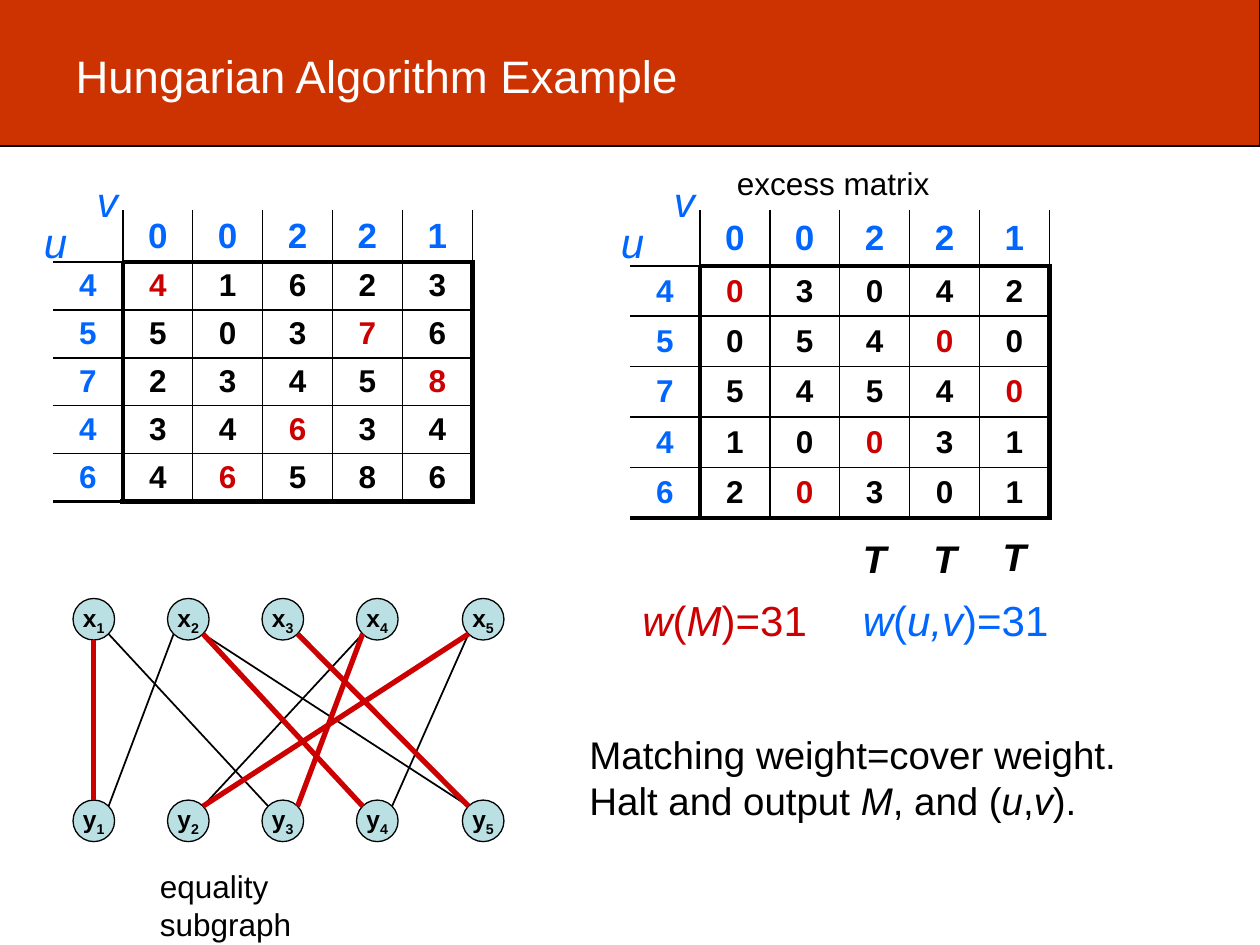
from lxml.etree import SubElement as Sub
from pptx import Presentation
from pptx.dml.color import RGBColor
from pptx.enum.shapes import MSO_CONNECTOR as Conn, MSO_SHAPE as Geo
from pptx.enum.text import MSO_ANCHOR as Anchor, PP_ALIGN as Align
from pptx.oxml.ns import qn
from pptx.util import Inches, Pt

BLACK = RGBColor(0x00, 0x00, 0x00)
WHITE = RGBColor(0xFF, 0xFF, 0xFF)
BAND = RGBColor(0xCC, 0x33, 0x00)
RED = RGBColor(0xCC, 0x00, 0x00)
BLUE = RGBColor(0x00, 0x66, 0xFF)
NODE = RGBColor(0xBB, 0xE0, 0xE3)

# Weights, cover labels and matching; the excess follows from them
U = [4, 5, 7, 4, 6]
V = [0, 0, 2, 2, 1]
COST = [[4, 1, 6, 2, 3], [5, 0, 3, 7, 6], [2, 3, 4, 5, 8],
        [3, 4, 6, 3, 4], [4, 6, 5, 8, 6]]
EXCESS = [[u + v - w for v, w in zip(V, row)] for u, row in zip(U, COST)]
MATCH = [0, 3, 4, 2, 1]
N = len(U)


def style(font, size, color, bold=None, italic=None):
    font.name, font.size, font.bold, font.italic = "Arial", Pt(size), bold, italic
    font.color.rgb = color


def label(slide, box, lines, size, color, bold=None):
    """Text box; parts between asterisks are italic."""
    frame = slide.shapes.add_textbox(*map(Inches, box)).text_frame
    frame.word_wrap = False
    for i, line in enumerate(lines.split("\n")):
        para = frame.add_paragraph() if i else frame.paragraphs[0]
        style(para.font, size, color, bold)
        for j, part in enumerate(line.split("*")):
            if part:
                run = para.add_run()
                run.text = part
                run.font.italic = j % 2 == 1


def header(slide, box):
    """Coloured band behind the title."""
    x, y, w, h = box
    band = slide.shapes.add_shape(Geo.RECTANGLE, *map(Inches, box))
    band.shadow.inherit = False
    band.fill.solid()
    band.fill.fore_color.rgb = BAND
    band.line.color.rgb = BLACK
    band.line.width = Pt(0.75)
    slide.shapes._spTree.insert(2, band._element)

    title = slide.shapes.title
    title.left, title.top = Inches(x + 0.51), Inches(y + 0.34)
    title.width, title.height = Inches(7.58), Inches(1)
    title.text = "Hungarian Algorithm Example"
    title.text_frame.vertical_anchor = Anchor.TOP
    para = title.text_frame.paragraphs[0]
    para.alignment = Align.LEFT
    style(para.font, 26, WHITE)


def rule_row(edge, col):
    """Width of the rule above row number edge."""
    if edge == 0:
        return 0
    if col == 0:
        return 2.25 if edge == N + 1 else 1
    return 3 if edge in (1, N + 1) else 1


def rule_col(edge, row):
    """Width of the rule left of column number edge."""
    if edge == 0:
        return 0
    return 3 if row and edge in (1, N + 1) else 1


def border(cell, side, width):
    line = Sub(cell._tc.get_or_add_tcPr(), qn("a:ln" + side), w=str(Pt(width)))
    if width:
        fill = Sub(line, qn("a:solidFill"))
        Sub(fill, qn("a:srgbClr"), val=str(BLACK))
    else:
        Sub(line, qn("a:noFill"))


def matrix(slide, box, values, head):
    """Matrix with blue labels, u down the side and v along the top."""
    x, y, w, h = box
    shape = slide.shapes.add_table(N + 1, N + 1, *map(Inches, box))
    table = shape.table
    table.first_row = table.horz_banding = False
    table._tbl.tblPr.find(qn("a:tableStyleId")).text = (
        "{2D5ABB26-0587-4C30-8999-92F81FD0307C}")
    grid = [[""] + V] + [[u] + row for u, row in zip(U, values)]
    for r, row in enumerate(grid):
        table.rows[r].height = Inches((h - head) / N if r else head)
        for c, value in enumerate(row):
            cell = table.cell(r, c)
            cell.margin_top = cell.margin_bottom = 0
            cell.vertical_anchor = Anchor.MIDDLE
            cell.text = str(value)
            para = cell.text_frame.paragraphs[0]
            para.alignment = Align.CENTER
            inner = r and c
            color = BLACK if inner else BLUE
            if inner and MATCH[r - 1] == c - 1:
                color = RED
            style(para.font, 18 if r else 20, color, True)
            border(cell, "L", rule_col(c, r))
            border(cell, "R", rule_col(c + 1, r))
            border(cell, "T", rule_row(r, c))
            border(cell, "B", rule_row(r + 1, c))
            cell.fill.background()
    label(slide, (x - 0.17, y, 0.39, 0.5), "*u*", 24, BLUE)
    label(slide, (x + 0.25, y - 0.33, 0.37, 0.5), "*v*", 24, BLUE)


def node(slide, x, y, size, name, index):
    dot = slide.shapes.add_shape(Geo.OVAL, *map(Inches, (x, y, size, size)))
    dot.shadow.inherit = False
    dot.fill.solid()
    dot.fill.fore_color.rgb = NODE
    dot.line.color.rgb = BLACK
    dot.line.width = Pt(0.75)
    frame = dot.text_frame
    frame.margin_left = frame.margin_right = 0
    frame.margin_top = frame.margin_bottom = 0
    frame.word_wrap = False
    frame.vertical_anchor = Anchor.MIDDLE
    para = frame.paragraphs[0]
    para.alignment = Align.CENTER
    style(para.font, 14, BLACK, True)
    para.add_run().text = name
    low = para.add_run()
    low.text = str(index)
    low._r.get_or_add_rPr().set("baseline", "-25000")


def graph(slide, box):
    """Two rows of nodes, joined where the excess is zero."""
    x, y, w, h = box
    size = 0.33
    mids = [x + size / 2 + step for step in (0, 0.75, 1.5, 2.25, w - size)]
    for name, top in (("x", y), ("y", y + h - size)):
        for i, mid in enumerate(mids, 1):
            node(slide, mid - size / 2, top, size, name, i)

    edges = [(i, j) for i in range(N) for j in range(N) if EXCESS[i][j] == 0]
    for i, j in sorted(edges, key=lambda edge: MATCH[edge[0]] == edge[1]):
        side = (j > i) - (j < i)
        dx = side * size * 0.354
        dy = size * (0.854 if side else 1)
        line = slide.shapes.add_connector(
            Conn.STRAIGHT, Inches(mids[i] + dx), Inches(y + dy),
            Inches(mids[j] - dx), Inches(y + h - dy))
        match = MATCH[i] == j
        line.line.color.rgb = RED if match else BLACK
        line.line.width = Pt(3 if match else 1)
        Sub(line._element.spPr, qn("a:effectLst"))
    label(slide, (x + 0.59, y + h + 0.15, 2.17, 0.4), "equality subgraph", 18, BLACK)


def result(slide, box):
    """Marked columns, the two weights and the conclusion."""
    x, y, w, h = box
    for left, top in ((2.17, 0.02), (2.73, 0.02), (3.28, 0)):
        label(slide, (x + left, y + top, 0.39, 0.47), "*T*", 22, BLACK, True)
    label(slide, (x + 0.42, y + 0.49, 1.51, 0.5), "*w*(*M*)=31", 24, RED)
    label(slide, (x + 2.17, y + 0.49, 1.68, 0.5), "*w*(*u,v*)=31", 24, BLUE)
    label(slide, (x, y + h - 0.83, w, 0.83),
          "Matching weight=cover weight.\nHalt and output *M*, and (*u*,*v*).", 22, BLACK)


def main():
    deck = Presentation()
    deck.slide_width, deck.slide_height = Inches(10), Inches(7.5)
    slide = deck.slides.add_slide(deck.slide_layouts[5])
    header(slide, (-0.01, -0.01, 10.01, 1.17))
    matrix(slide, (0.42, 1.67, 3.33, 2.31), COST, 0.41)
    matrix(slide, (5, 1.67, 3.33, 2.44), EXCESS, 0.44)
    label(slide, (5.75, 1.25, 1.73, 0.4), "excess matrix", 18, BLACK)
    graph(slide, (0.58, 4.75, 3.42, 1.93))
    result(slide, (4.58, 4.18, 4.39, 2.4))
    deck.save("out.pptx")


if __name__ == "__main__":
    main()
